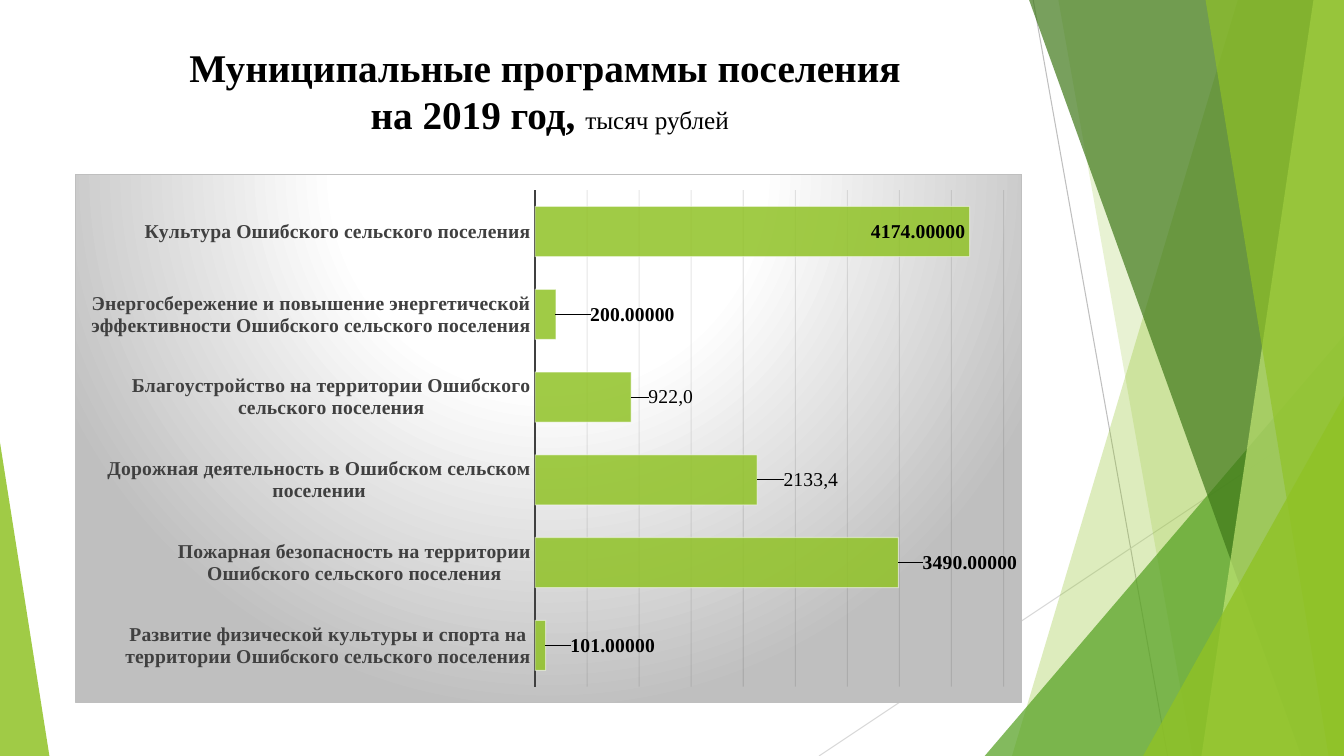
from dataclasses import dataclass

from lxml import etree
from pptx import Presentation, util as u
from pptx.chart.data import CategoryChartData
from pptx.dml.color import RGBColor
from pptx.enum import chart as ch, shapes, text
from pptx.oxml import parse_xml
from pptx.oxml.ns import nsdecls, qn

W, H = 960, 540
SERIF = "Times New Roman"
LIME = "90C226"
VALUE_FORMAT = "0.00000"


@dataclass
class Band:
    top_x: float
    bottom_x: float
    color: str
    opacity: int


@dataclass
class Triangle:
    left: float
    top: float
    width: float
    apex: float
    color: str
    opacity: int


@dataclass
class Line:
    x1: float
    y1: float
    x2: float
    y2: float
    color: str


@dataclass
class Program:
    name: str
    amount: float
    label: str = ""
    shift: float = 0


LINES = [Line(738, 0, 834, H, "BFBFBF"), Line(W, 290, 585, H, "D9D9D9")]

FACETS = [
    Band(884.2, 722.9, LIME, 30),
    Band(756, 851.8, LIME, 20),
    Triangle(703.4, 239.8, 256.6, 1, "54A021", 72),
    Band(735.1, 929.5, "3F7819", 70),
    Band(938.2, 858.2, "C0E474", 70),
    Band(861.1, 949, LIME, 65),
    Triangle(816.5, 283, 143.5, 1, LIME, 80),
    Triangle(0, 316.1, 35.3, 0, LIME, 85),
]

PROGRAMS = [
    Program("Развитие физической культуры и спорта на территории Ошибского сельского поселения", 101, shift=0.12),
    Program("Пожарная безопасность на территории Ошибского сельского поселения", 3490, shift=0.13),
    Program("Дорожная деятельность в Ошибском сельском поселении", 2133.4, "2133,4", 0.09),
    Program("Благоустройство на территории Ошибского сельского поселения", 922, "922,0", 0.07),
    Program("Энергосбережение и повышение энергетической эффективности Ошибского сельского поселения", 200, shift=0.13),
    Program("Культура Ошибского сельского поселения", 4174),
]


def rgb(color: str) -> RGBColor:
    return RGBColor.from_string(color)


def set_opacity(element, xpath: str, percent: int) -> None:
    for clr in element.xpath(xpath):
        etree.SubElement(clr, qn("a:alpha")).set("val", str(percent * 1000))


def set_font(font, size: float, color: str, bold: bool) -> None:
    font.name, font.size, font.bold = SERIF, u.Pt(size), bold
    font.color.rgb = rgb(color)


def set_line(line, color: str, width: float) -> None:
    line.color.rgb = rgb(color)
    line.width = u.Pt(width)


def add_line(s, line: Line) -> None:
    ends = (u.Pt(v) for v in (line.x1, line.y1, line.x2, line.y2))
    cx = s.shapes.add_connector(shapes.MSO_CONNECTOR.STRAIGHT, *ends)
    set_line(cx.line, line.color, 0.75)
    etree.SubElement(cx.element.spPr, qn("a:effectLst"))


def add_facet(s, facet: Band | Triangle) -> None:
    if isinstance(facet, Band):
        fb = s.shapes.build_freeform(u.Pt(facet.top_x), 0)
        corners = [(W, 0), (W, H), (facet.bottom_x, H)]
        fb.add_line_segments([(u.Pt(x), u.Pt(y)) for x, y in corners], close=True)
        sp = fb.convert_to_shape()
    else:
        box = (facet.left, facet.top, facet.width, H - facet.top)
        sp = s.shapes.add_shape(shapes.MSO_SHAPE.ISOSCELES_TRIANGLE, *map(u.Pt, box))
        sp.adjustments[0] = facet.apex
    sp.shadow.inherit = False
    sp.fill.solid()
    sp.fill.fore_color.rgb = rgb(facet.color)
    sp.line.fill.background()
    set_opacity(sp.element, "./p:spPr/a:solidFill/a:srgbClr", facet.opacity)


def add_title(s) -> None:
    sp = s.shapes.title
    sp.left, sp.top, sp.width, sp.height = map(u.Pt, (37.5, 24, 710.5, 80.5))
    tf = sp.text_frame
    tf.word_wrap = True
    tf.auto_size = text.MSO_AUTO_SIZE.NONE
    tf.vertical_anchor = text.MSO_ANCHOR.MIDDLE
    p = tf.paragraphs[0]
    p.text = "Муниципальные программы поселения \vна 2019 год, "
    p.alignment = text.PP_ALIGN.CENTER
    p.add_run().text = "тысяч рублей"
    for r in p.runs:
        set_font(r.font, 28, "000000", True)
    set_font(p.runs[-1].font, 18, "000000", False)


def layout_xml(x: float, y: float, size: str = ""):
    return parse_xml(
        f'<c:layout {nsdecls("c")}><c:manualLayout>{size and "<c:layoutTarget val=" + chr(34) + "inner" + chr(34) + "/>"}'
        f'{size and "<c:xMode val=" + chr(34) + "edge" + chr(34) + "/><c:yMode val=" + chr(34) + "edge" + chr(34) + "/>"}'
        f'<c:x val="{x}"/><c:y val="{y}"/>{size}</c:manualLayout></c:layout>')


def label_point(point, program: Program) -> None:
    label = point.data_label
    if program.label:
        p = label.text_frame.paragraphs[0]
        p.text = program.label
        set_font(p.runs[0].font, 14, "000000", False)
    else:
        set_font(label.font, 14, "000000", True)
    label.position = ch.XL_LABEL_POSITION.INSIDE_END


def add_programs_chart(s) -> None:
    data = CategoryChartData(number_format=VALUE_FORMAT)
    data.categories = [program.name for program in PROGRAMS]
    data.add_series("Series 1", [program.amount for program in PROGRAMS])
    box = map(u.Pt, (53.3, 124.6, 676.8, 377.3))
    chart = s.shapes.add_chart(ch.XL_CHART_TYPE.BAR_CLUSTERED, *box, data).chart
    chart.has_title = chart.has_legend = False
    chart.font.name, chart.font.size = "Cabin", u.Pt(10)
    chart.font.color.rgb = rgb("000000")

    cat = chart.category_axis
    cat.major_tick_mark = cat.minor_tick_mark = ch.XL_TICK_MARK.NONE
    cat.has_major_gridlines = False
    set_font(cat.tick_labels.font, 14, "404040", True)
    set_line(cat.format.line, "404040", 1.5)

    val = chart.value_axis
    val.minimum_scale, val.maximum_scale, val.major_unit = 0, 4500, 500
    val.has_major_gridlines = True
    set_line(val.major_gridlines.format.line, "0D0D0D", 0.75)
    val.visible = False

    plot = chart.plots[0]
    plot.gap_width = 65
    plot.vary_by_categories = False
    ser = plot.series[0]
    ser.format.fill.solid()
    ser.format.fill.fore_color.rgb = rgb(LIME)
    set_line(ser.format.line, "FFFFFF", 0.75)

    labels = ser.data_labels
    labels.show_value = True
    labels.number_format, labels.number_format_is_linked = VALUE_FORMAT, False
    labels.position = ch.XL_LABEL_POSITION.INSIDE_END
    set_font(labels.font, 14, "000000", True)
    for i, program in enumerate(PROGRAMS):
        if program.shift:
            label_point(ser.points[i], program)

    root = chart.element
    shifted = [program for program in PROGRAMS if program.shift]
    for node, program in zip(root.xpath(".//c:dLbl"), shifted):
        node.insert(1, layout_xml(program.shift, 0))
        if not program.label:
            node.insert(2, parse_xml(f'<c:numFmt {nsdecls("c")} formatCode="{VALUE_FORMAT}" sourceLinked="0"/>'))
    set_opacity(root, ".//c:ser/c:spPr/a:solidFill/a:srgbClr", 85)
    set_opacity(root, ".//c:ser/c:spPr/a:ln//a:srgbClr", 50)
    set_opacity(root, ".//c:majorGridlines//a:srgbClr", 10)

    area = root.xpath("./c:chart/c:plotArea")[0]
    for old in area.xpath("./c:layout"):
        area.remove(old)
    area.insert(0, layout_xml(0.486, 0.029, '<c:w val="0.495"/><c:h val="0.942"/>'))
    stops = "".join(f'<a:gs pos="{pos * 1000}"><a:srgbClr val="{color}"/></a:gs>'
                    for pos, color in ((0, "FFFFFF"), (39, "FFFFFF"), (100, "BFBFBF")))
    root.xpath("./c:txPr")[0].addprevious(parse_xml(
        f'<c:spPr {nsdecls("c", "a")}><a:gradFill><a:gsLst>{stops}</a:gsLst><a:path path="circle">'
        '<a:fillToRect l="50000" t="-80000" r="50000" b="180000"/></a:path></a:gradFill>'
        '<a:ln w="9525"><a:solidFill><a:srgbClr val="BFBFBF"/></a:solidFill></a:ln></c:spPr>'))


def main() -> None:
    prs = Presentation()
    prs.slide_width, prs.slide_height = u.Pt(W), u.Pt(H)
    s = prs.slides.add_slide(prs.slide_layouts[5])
    for line in LINES:
        add_line(s, line)
    for facet in FACETS:
        add_facet(s, facet)
    add_title(s)
    add_programs_chart(s)
    prs.save("out.pptx")


if __name__ == "__main__":
    main()
